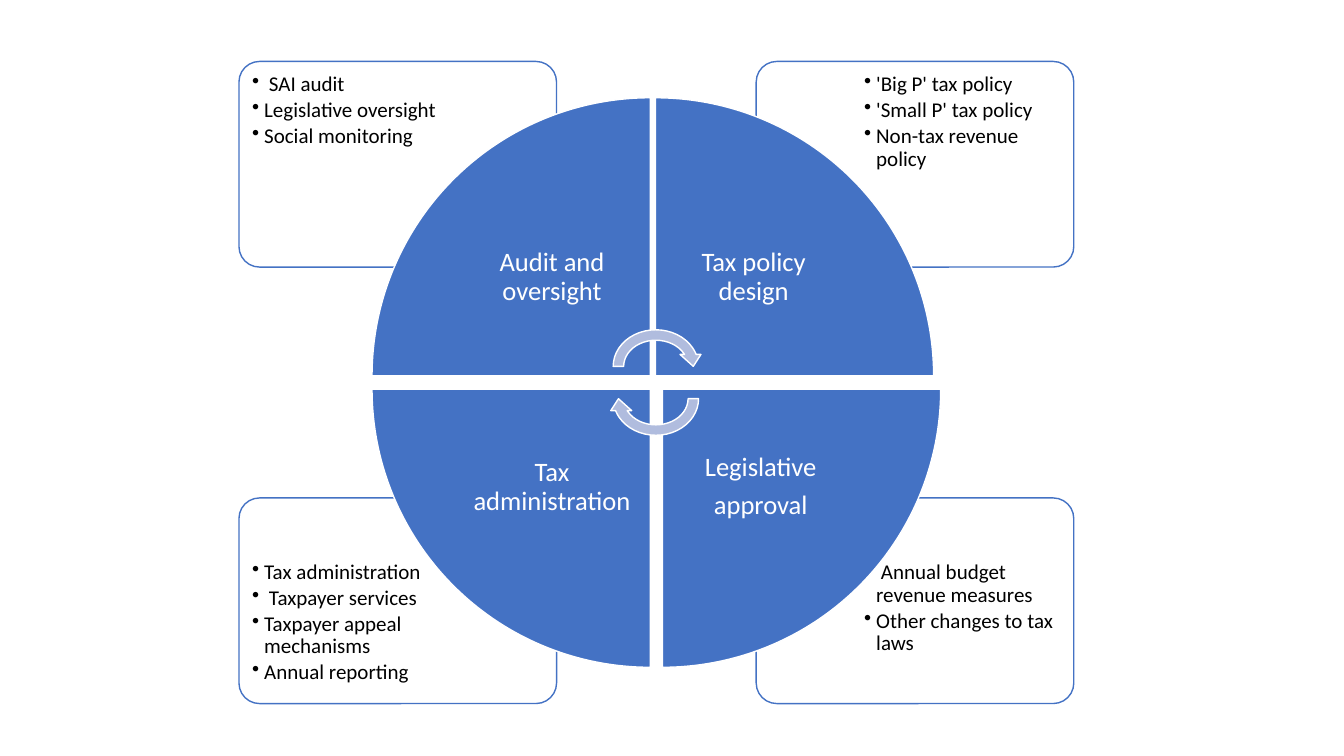
import dataclasses

import lxml.etree
import pptx
import pptx.dml.color
import pptx.enum.shapes
import pptx.enum.text
import pptx.oxml.ns
import pptx.util

SCALE = 9144
COLORS = {"blue": "4472C4", "pale": "B0BCDE", "white": "FFFFFF", "black": "000000"}
FONT = "Calibri"
KIND = pptx.enum.shapes.MSO_SHAPE
ALIGN = pptx.enum.text.PP_ALIGN
ANCHOR = pptx.enum.text.MSO_ANCHOR

BOX_W, BOX_H = 315, 204
LIST_W, LIST_H = 211, 144
WEDGE = 276
LABEL = 195
ARROW_W, ARROW_H = 95, 83


@dataclasses.dataclass(frozen=True)
class Panel:
    left: int
    top: int
    text_left: int
    text_top: int
    items: tuple[str, ...]


@dataclasses.dataclass(frozen=True)
class Wedge:
    left: int
    top: int
    turn: int
    lines: tuple[str, ...]


PANELS = (
    Panel(750, 494, 849, 549, (" Annual budget revenue measures", "Other changes to tax laws")),
    Panel(237, 494, 242, 549, ("Tax administration", " Taxpayer services",
                               "Taxpayer appeal mechanisms", "Annual reporting")),
    Panel(750, 61, 849, 65, ("'Big P' tax policy", "'Small P' tax policy",
                             "Non-tax revenue policy")),
    Panel(237, 61, 242, 65, (" SAI audit", "Legislative oversight", "Social monitoring")),
)

WEDGES = (
    Wedge(369, 97, 0, ("Audit and oversight",)),
    Wedge(650, 97, 90, ("Tax policy design",)),
    Wedge(657, 386, 180, ("Legislative", "approval")),
    Wedge(369, 386, 270, ("Tax administration",)),
)


def px(count: int) -> pptx.util.Emu:
    return pptx.util.Emu(count * SCALE)


def color(name: str) -> pptx.dml.color.RGBColor:
    return pptx.dml.color.RGBColor.from_string(COLORS[name])


def add_form(slide, kind, left: int, top: int, width: int, height: int,
             fill: str, line: str, turn: int = 0):
    form = slide.shapes.add_shape(kind, px(left), px(top), px(width), px(height))
    form.shadow.inherit = False
    form.rotation = turn
    form.fill.solid()
    form.fill.fore_color.rgb = color(fill)
    form.line.color.rgb = color(line)
    form.line.width = pptx.util.Pt(1)
    return form


def add_bullet(para) -> None:
    props = para._p.get_or_add_pPr()
    props.set("marL", str(px(12)))
    props.set("indent", str(-px(12)))
    mark = lxml.etree.SubElement(props, pptx.oxml.ns.qn("a:buChar"))
    mark.set("char", "•")


def add_text(slide, lines: tuple[str, ...], left: int, top: int, width: int, height: int, *,
             size: int, ink: str, inset: int, after: float, align=ALIGN.LEFT,
             anchor=ANCHOR.TOP, bullet: bool = False) -> None:
    frame = slide.shapes.add_textbox(px(left), px(top), px(width), px(height)).text_frame
    frame.word_wrap = True
    frame.vertical_anchor = anchor
    frame.margin_left = frame.margin_right = px(inset)
    frame.margin_top = frame.margin_bottom = px(inset)
    for index, line in enumerate(lines):
        para = frame.add_paragraph() if index else frame.paragraphs[0]
        para.alignment = align
        para.line_spacing = 0.9
        para.space_after = pptx.util.Pt(size * after)
        if bullet:
            add_bullet(para)
        run = para.add_run()
        run.text = line
        run.font.name = FONT
        run.font.size = pptx.util.Pt(size)
        run.font.color.rgb = color(ink)


def draw_panel(slide, panel: Panel) -> None:
    form = add_form(slide, KIND.ROUNDED_RECTANGLE, panel.left, panel.top, BOX_W, BOX_H,
                    "white", "blue")
    form.adjustments[0] = 0.1
    add_text(slide, panel.items, panel.text_left, panel.text_top, LIST_W, LIST_H,
             size=15, ink="black", inset=8, after=0.15, bullet=True)


def draw_wedge(slide, wedge: Wedge) -> None:
    add_form(slide, KIND.PIE_WEDGE, wedge.left, wedge.top, WEDGE, WEDGE,
             "blue", "white", wedge.turn)
    inward = WEDGE - LABEL
    left = wedge.left + (inward if wedge.turn in (0, 270) else 0)
    top = wedge.top + (inward if wedge.turn in (0, 90) else 0)
    add_text(slide, wedge.lines, left, top, LABEL, LABEL, size=19, ink="white",
             inset=15, after=0.35, align=ALIGN.CENTER, anchor=ANCHOR.MIDDLE)


def main() -> None:
    deck = pptx.Presentation()
    deck.slide_width, deck.slide_height = px(1333), px(750)
    slide = deck.slides.add_slide(deck.slide_layouts[6])
    for panel in PANELS:
        draw_panel(slide, panel)
    for wedge in WEDGES:
        draw_wedge(slide, wedge)
    for top, turn in ((322, 0), (354, 180)):
        add_form(slide, KIND.CIRCULAR_ARROW, 603, top, ARROW_W, ARROW_H,
                 "pale", "white", turn)
    deck.save("out.pptx")


if __name__ == "__main__":
    main()
